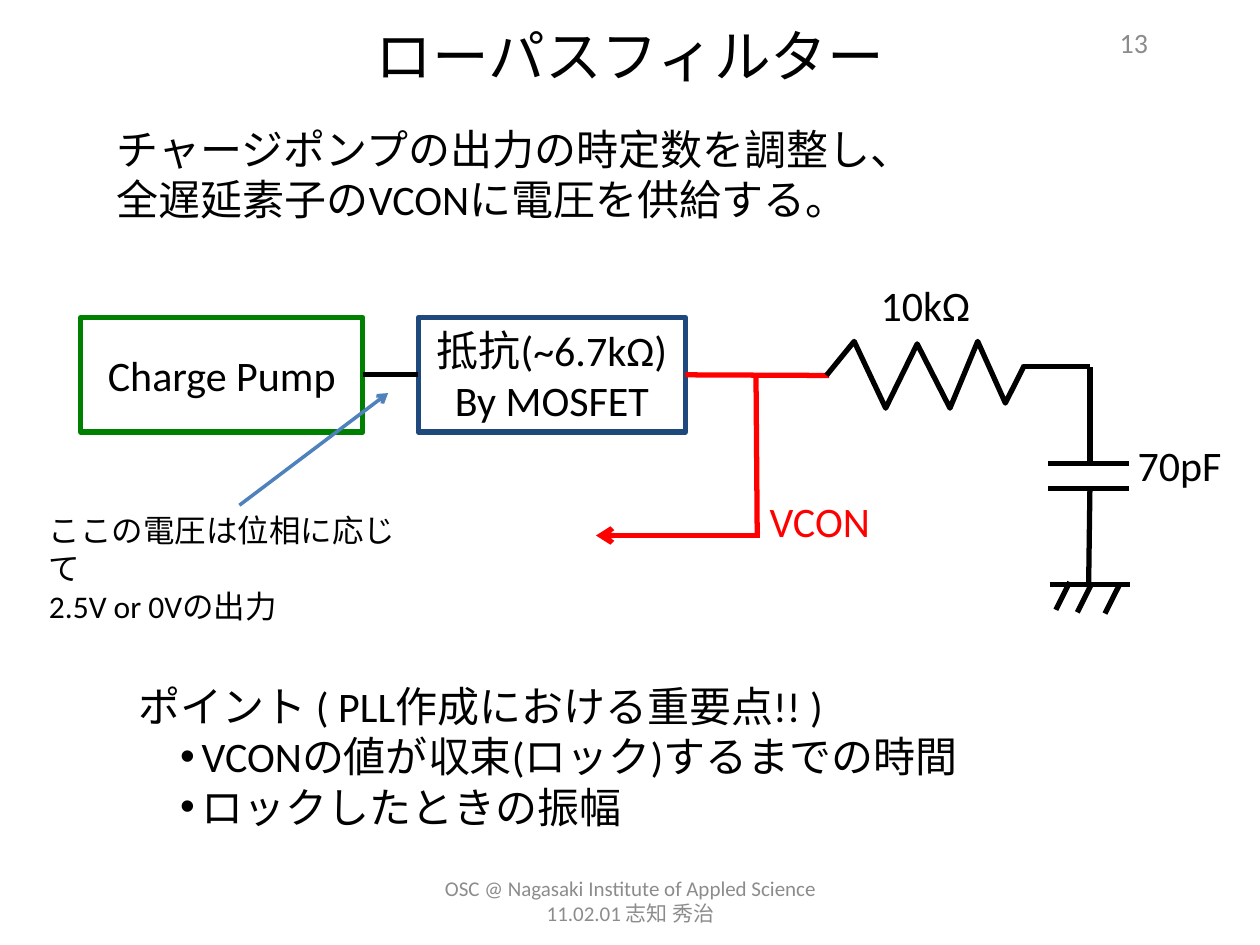
from typing import NamedTuple, Optional

from lxml.etree import SubElement
from pptx import Presentation
from pptx.dml.color import RGBColor
from pptx.enum.shapes import MSO_CONNECTOR as Connector, MSO_SHAPE as Shape
from pptx.enum.text import MSO_ANCHOR as Anchor, MSO_AUTO_SIZE as AutoSize, PP_ALIGN as Align
from pptx.oxml.ns import qn
from pptx.util import Inches, Pt

BLACK = RGBColor(0x00, 0x00, 0x00)
GRAY = RGBColor(0x8C, 0x8C, 0x8C)
RED = RGBColor(0xFF, 0x00, 0x00)
GREEN = RGBColor(0x00, 0x80, 0x00)
NAVY = RGBColor(0x1F, 0x49, 0x7D)
BLUE = RGBColor(0x4F, 0x81, 0xBD)
FONT = "Calibri"
TOP, BOTTOM, LEFT, RIGHT = 0, 2, 1, 3


class Label(NamedTuple):
    text: str
    box: tuple
    size: float = 24
    color: RGBColor = BLACK
    align: Align = Align.LEFT
    anchor: Anchor = Anchor.TOP


class Block(NamedTuple):
    text: str
    box: tuple
    border: RGBColor


class Wire(NamedTuple):
    start: tuple
    end: tuple
    color: RGBColor = BLACK
    width: float = 3
    arrow: bool = False


LABELS = [
    Label("OSC @ Nagasaki Institute of Appled Science 11.02.01 志知 秀治",
          (3.42, 6.95, 3.17, 0.4), 12, GRAY, Align.CENTER, Anchor.MIDDLE),
    Label("13", (8.65, 0.05, 0.56, 0.57), 16, GRAY, Align.RIGHT, Anchor.MIDDLE),
    Label("チャージポンプの出力の時定数を調整し、\n全遅延素子のVCONに電圧を供給する。",
          (0.83, 0.93, 7.93, 0.91)),
    Label("ここの電圧は位相に応じて\n2.5V or 0Vの出力", (0.29, 4.01, 3.13, 0.71), 18),
    Label("VCON", (6.01, 3.88, 1.03, 0.5), color=RED),
    Label("10kΩ", (6.89, 2.17, 1.29, 0.5)),
    Label("70pF", (8.93, 3.44, 1.07, 0.5)),
]
CHARGE_PUMP = Block("Charge Pump", (0.64, 2.52, 2.24, 0.91), GREEN)
MOSFET_RESISTOR = Block("抵抗(~6.7kΩ)\nBy MOSFET", (3.32, 2.52, 2.12, 0.91), NAVY)

PUMP_OUTPUT = Wire((2.88, 2.98), (3.32, 2.98))
FILTER_INPUT = Wire((5.44, 2.98), (6.58, 2.98), RED)
ZIGZAG = [(6.56, 2.98), (6.78, 2.71), (7.03, 3.24), (7.28, 2.73),
          (7.54, 3.24), (7.76, 2.71), (7.98, 3.2), (8.13, 2.9)]

CAPACITOR = [
    Wire((8.12, 2.91), (8.65, 2.91)),
    Wire((8.65, 3.68), (8.65, 2.91)),
    *[Wire((8.32, y), (8.96, y)) for y in (3.68, 3.88)],
    Wire((8.64, 4.66), (8.65, 3.89)),
]
GROUND = [
    Wire((8.33, 4.64), (8.97, 4.64)),
    *[Wire((x, y), (x + 0.11, y - 0.22))
      for x, y in ((8.38, 4.84), (8.55, 4.86), (8.77, 4.87))],
]
CALLOUT = Wire((1.9, 4.01), (3.08, 3.12), BLUE, 2, True)
VCON_BRANCH = [
    Wire((6, 2.98), (6.01, 4.27), RED),
    Wire((6.01, 4.25), (4.73, 4.25), RED, arrow=True),
]
POINTS = [
    "ポイント ( PLL作成における重要点!! )",
    "VCONの値が収束(ロック)するまでの時間",
    "ロックしたときの振幅",
]


def place(shape, box: tuple) -> None:
    shape.left, shape.top, shape.width, shape.height = map(Inches, box)


def write(frame, text: str, size: float, color: RGBColor = BLACK,
          align: Align = Align.LEFT, anchor: Anchor = Anchor.TOP) -> None:
    frame.text = text
    frame.word_wrap = True
    frame.auto_size = AutoSize.NONE
    frame.vertical_anchor = anchor
    for paragraph in frame.paragraphs:
        paragraph.alignment = align
        for run in paragraph.runs:
            run.font.name = FONT
            run.font.size = Pt(size)
            run.font.color.rgb = color


def add_label(slide, label: Label) -> None:
    textbox = slide.shapes.add_textbox(*map(Inches, label.box))
    write(textbox.text_frame, label.text, label.size, label.color, label.align, label.anchor)


def add_block(slide, block: Block):
    rect = slide.shapes.add_shape(Shape.RECTANGLE, *map(Inches, block.box))
    rect.shadow.inherit = False
    rect.fill.background()
    rect.line.color.rgb = block.border
    rect.line.width = Pt(3)
    write(rect.text_frame, block.text, 24, align=Align.CENTER, anchor=Anchor.MIDDLE)
    # The resistor caption nearly fills its box
    rect.text_frame.margin_left = rect.text_frame.margin_right = Inches(0.05)
    return rect


def add_wire(slide, wire: Wire, source: Optional[object] = None,
             target: Optional[object] = None) -> None:
    """Draw a wire, joined to the source's right and the target's left side if given."""
    line = slide.shapes.add_connector(
        Connector.STRAIGHT, *map(Inches, (*wire.start, *wire.end)))
    if source is not None:
        line.begin_connect(source, RIGHT)
    if target is not None:
        line.end_connect(target, LEFT)
    line.line.color.rgb = wire.color
    line.line.width = Pt(wire.width)
    properties = line._element.spPr
    if wire.arrow:
        SubElement(properties.find(qn("a:ln")), qn("a:tailEnd"), type="arrow")
    SubElement(properties, qn("a:effectLst"))


def add_zigzag(slide, points: list) -> None:
    builder = slide.shapes.build_freeform(*map(Inches, points[0]), scale=1.0)
    builder.add_line_segments(
        [(Inches(x), Inches(y)) for x, y in points[1:]], close=False)
    resistor = builder.convert_to_shape()
    resistor.shadow.inherit = False
    resistor.fill.background()
    resistor.line.color.rgb = BLACK
    resistor.line.width = Pt(3)


def fill_points(body) -> None:
    """Write a plain heading followed by indented bullets."""
    place(body, (1, 5.35, 7.93, 1.31))
    write(body.text_frame, "\n".join(POINTS), 24)
    for index, paragraph in enumerate(body.text_frame.paragraphs):
        paragraph.space_before = Pt(0)
        properties = paragraph._p.get_or_add_pPr()
        margin, indent = (0.5, -0.17) if index else (0, 0)
        properties.set("marL", str(Inches(margin)))
        properties.set("indent", str(Inches(indent)))
        if index:
            SubElement(properties, qn("a:buChar"), char="•")
        else:
            SubElement(properties, qn("a:buNone"))


def main() -> None:
    deck = Presentation()
    deck.slide_width, deck.slide_height = Inches(10), Inches(7.5)
    slide = deck.slides.add_slide(deck.slide_layouts[1])
    title, body = slide.placeholders
    place(title, (0.5, 0.17, 9, 0.53))
    write(title.text_frame, "ローパスフィルター", 32.4,
          align=Align.CENTER, anchor=Anchor.MIDDLE)
    fill_points(body)

    pump = add_block(slide, CHARGE_PUMP)
    mosfet = add_block(slide, MOSFET_RESISTOR)
    add_wire(slide, PUMP_OUTPUT, pump, mosfet)
    add_wire(slide, FILTER_INPUT, mosfet)
    add_zigzag(slide, ZIGZAG)
    for wire in (*CAPACITOR, *GROUND, CALLOUT, *VCON_BRANCH):
        add_wire(slide, wire)
    for label in LABELS:
        add_label(slide, label)
    deck.save("out.pptx")


if __name__ == "__main__":
    main()
